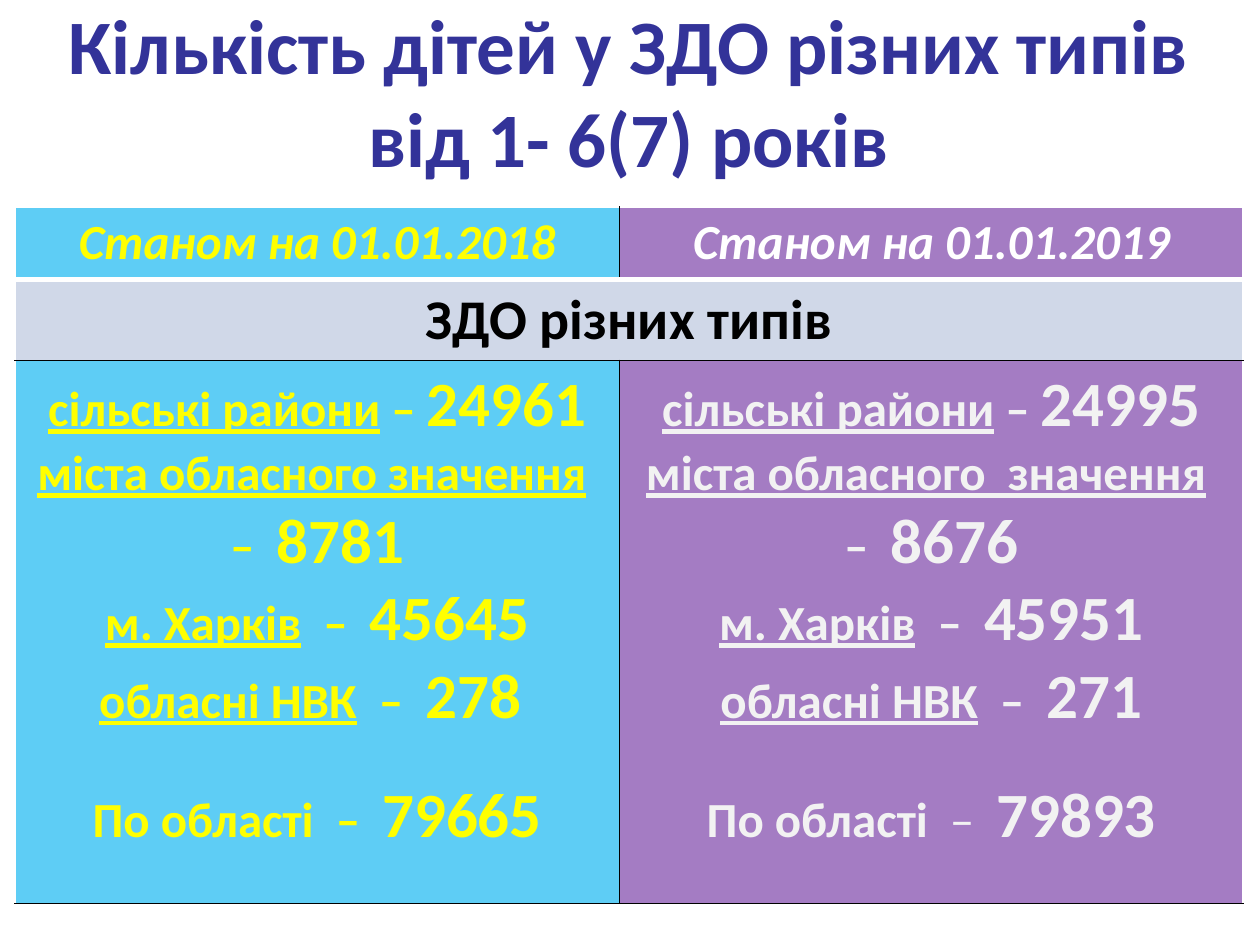
from dataclasses import dataclass

from lxml.etree import SubElement
from pptx import Presentation
from pptx.dml.color import RGBColor
from pptx.enum.text import MSO_ANCHOR, MSO_AUTO_SIZE, PP_ALIGN
from pptx.oxml.ns import qn
from pptx.table import Table, _Cell
from pptx.text.text import TextFrame, _Paragraph
from pptx.util import Cm, Pt


@dataclass(frozen=True)
class Theme:
    font: str = "Calibri"
    title_color: str = "333399"
    white: str = "FFFFFF"
    black: str = "000000"
    band_fill: str = "D0D8E8"
    title_size: int = 44
    band_size: int = 32
    label_size: int = 28
    number_size: int = 36
    fill_opacity: int = 63


THEME = Theme()


@dataclass(frozen=True)
class Entry:
    label: str
    dash: str
    number: str
    underline: bool = True
    dash_bold: bool = True
    space_before: int = 0


@dataclass(frozen=True)
class Year:
    heading: str
    fill: str
    heading_color: str
    text_color: str
    entries: tuple[Entry, ...]


@dataclass(frozen=True)
class Border:
    color: str
    width: int = 1


WHITE, WHITE_THICK, BLACK = Border(THEME.white), Border(THEME.white, 3), Border(THEME.black)

YEARS = (
    Year("Станом на 01.01.2018", "00B0F0", "FFFF00", "FFFF00", (
        Entry("сільські райони", " – ", "24961"),
        Entry("міста обласного значення", "  –  ", "8781"),
        Entry("м. Харків", "  –  ", "45645"),
        Entry("обласні НВК", "  –  ", "278 "),
        Entry("По області", "  –  ", "79665", underline=False, space_before=24),
    )),
    Year("Станом на 01.01.2019", "7030A0", THEME.white, "F2F2F2", (
        Entry("сільські райони", " – ", "24995"),
        Entry("міста обласного  значення", "  –  ", "8676"),
        Entry("м. Харків", "  –  ", "45951"),
        Entry("обласні НВК", "  –  ", "271"),
        Entry("По області", "  –  ", "79893", underline=False, dash_bold=False, space_before=24),
    )),
)
TITLE_LINES = ("Кількість дітей у ЗДО різних типів", "від 1- 6(7) років")
BAND_TEXT = "ЗДО різних типів"
COLUMN_WIDTHS = (Cm(12.19), Cm(12.57))
ROW_HEIGHTS = (Cm(1.42), Cm(1.62), Cm(10.95))
# Horizontal rules from the top edge of the table to its bottom edge
ROW_RULES = (WHITE, WHITE_THICK, BLACK, BLACK)


def add_span(para: _Paragraph, text: str, size: int, color: str, **formats: bool) -> None:
    span = para.add_run()
    span.text = text
    values = {"name": THEME.font, "size": Pt(size), "bold": True, **formats}
    for name, value in values.items():
        setattr(span.font, name, value)
    span.font.color.rgb = RGBColor.from_string(color)


def next_paragraph(frame: TextFrame, index: int) -> _Paragraph:
    """Return the frame's own first paragraph for index 0, otherwise a new one."""
    para = frame.paragraphs[0] if index == 0 else frame.add_paragraph()
    para.alignment = PP_ALIGN.CENTER
    return para


def fill_cell(cell: _Cell, color: str, opacity: int = 100) -> None:
    cell.fill.solid()
    cell.fill.fore_color.rgb = RGBColor.from_string(color)
    if opacity < 100:
        tint = cell._tc.get_or_add_tcPr().find(f".//{qn('a:srgbClr')}")
        SubElement(tint, qn("a:alpha"), val=str(opacity * 1000))


def set_borders(cell: _Cell, left: Border, right: Border, top: Border, bottom: Border) -> None:
    """Place the border lines ahead of the fill, as the schema requires."""
    properties = cell._tc.get_or_add_tcPr()
    sides = {"a:lnL": left, "a:lnR": right, "a:lnT": top, "a:lnB": bottom}
    for position, (tag, border) in enumerate(sides.items()):
        line = SubElement(properties, qn(tag), w=str(Pt(border.width)))
        solid = SubElement(line, qn("a:solidFill"))
        SubElement(solid, qn("a:srgbClr"), val=border.color)
        properties.insert(position, line)


def write_entries(frame: TextFrame, year: Year) -> None:
    for index, entry in enumerate(year.entries):
        para = next_paragraph(frame, index)
        if entry.space_before:
            para.space_before = Pt(entry.space_before)
        add_span(para, entry.label, THEME.label_size, year.text_color, underline=entry.underline)
        add_span(para, entry.dash, THEME.label_size, year.text_color, bold=entry.dash_bold)
        add_span(para, entry.number, THEME.number_size, year.text_color)


def draw_year(table: Table, column: int, year: Year) -> None:
    heading, body = table.cell(0, column), table.cell(2, column)
    heading.vertical_anchor = MSO_ANCHOR.MIDDLE
    add_span(next_paragraph(heading.text_frame, 0), year.heading,
             THEME.label_size, year.heading_color, italic=True)
    write_entries(body.text_frame, year)
    for cell in (heading, body):
        fill_cell(cell, year.fill, THEME.fill_opacity)


def draw_band(table: Table) -> None:
    band = table.cell(1, 0)
    band.merge(table.cell(1, 1))
    band.vertical_anchor = MSO_ANCHOR.MIDDLE
    add_span(next_paragraph(band.text_frame, 0), BAND_TEXT, THEME.band_size, THEME.black)
    for column in range(len(YEARS)):
        fill_cell(table.cell(1, column), THEME.band_fill)


def draw_table(page) -> None:
    table = page.shapes.add_table(len(ROW_HEIGHTS), len(YEARS), Cm(0.3), Cm(4.17),
                                  sum(COLUMN_WIDTHS), sum(ROW_HEIGHTS)).table
    table.first_row = table.horz_banding = False
    for column, width in zip(table.columns, COLUMN_WIDTHS):
        column.width = width
    for row, height in zip(table.rows, ROW_HEIGHTS):
        row.height = height
    draw_band(table)
    for column, year in enumerate(YEARS):
        draw_year(table, column, year)
    for row in range(len(ROW_HEIGHTS)):
        middle = WHITE if row == 1 else BLACK
        column_rules = (WHITE, middle, WHITE)
        for column in range(len(YEARS)):
            set_borders(table.cell(row, column), *column_rules[column:column + 2],
                        *ROW_RULES[row:row + 2])


def draw_title(page) -> None:
    box = page.shapes.title
    place = {"left": Cm(0.3), "top": Cm(0.08), "width": Cm(24.77), "height": Cm(3.48)}
    for name, value in place.items():
        setattr(box, name, value)
    frame = box.text_frame
    layout = {"word_wrap": True, "auto_size": MSO_AUTO_SIZE.NONE,
              "vertical_anchor": MSO_ANCHOR.MIDDLE}
    for name, value in layout.items():
        setattr(frame, name, value)
    for index, line in enumerate(TITLE_LINES):
        add_span(next_paragraph(frame, index), line, THEME.title_size, THEME.title_color)


def main() -> None:
    deck = Presentation()
    deck.slide_width, deck.slide_height = Cm(25.4), Cm(19.05)
    page = deck.slides.add_slide(deck.slide_layouts.get_by_name("Title Only"))
    draw_title(page)
    draw_table(page)
    deck.save("out.pptx")


if __name__ == "__main__":
    main()
